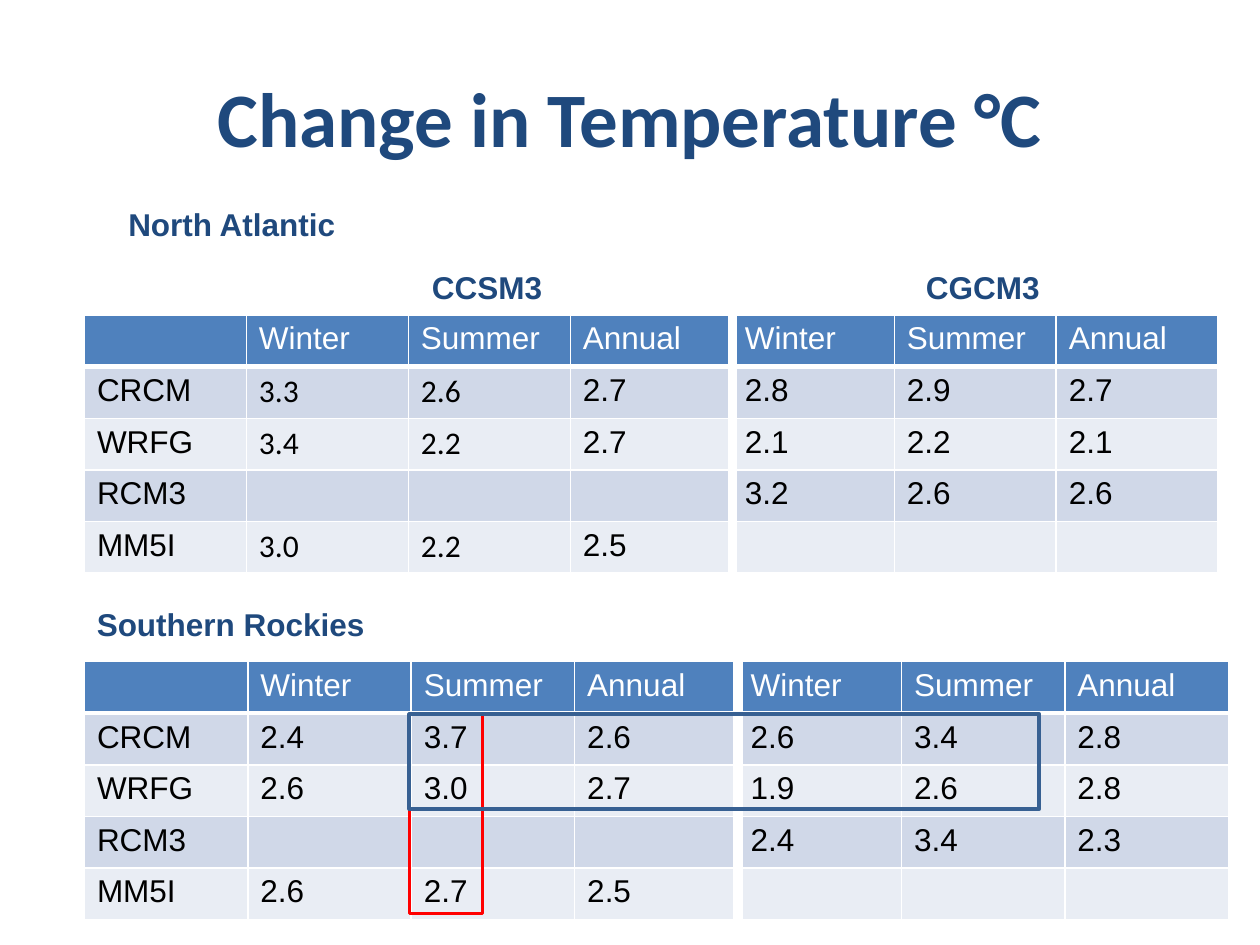
from lxml.etree import SubElement
from pptx import Presentation
from pptx.dml.color import RGBColor
from pptx.enum.shapes import MSO_SHAPE
from pptx.enum.text import MSO_ANCHOR, PP_ALIGN
from pptx.oxml import parse_xml
from pptx.oxml.ns import nsdecls
from pptx.util import Inches, Pt

NAVY, WHITE, BLACK = "1F497D", "FFFFFF", "000000"
HEADER_FILL, BAND_FILLS = "4F81BD", ("D0D8E8", "E9EDF4")
ROW_HEIGHT = 0.41
SPLIT = 4  # first column of the second driving model

SEASONS = ["Winter", "Summer", "Annual"]
HEADER = [""] + SEASONS * 2
ATLANTIC = [
    HEADER,
    ["CRCM", "3.3", "2.6", "2.7", "2.8", "2.9", "2.7"],
    ["WRFG", "3.4", "2.2", "2.7", "2.1", "2.2", "2.1"],
    ["RCM3", "", "", "", "3.2", "2.6", "2.6"],
    ["MM5I", "3.0", "2.2", "2.5", "", "", ""],
]
ROCKIES = [
    HEADER,
    ["CRCM", "2.4", "3.7", "2.6", "2.6", "3.4", "2.8"],
    ["WRFG", "2.6", "3.0", "2.7", "1.9", "2.6", "2.8"],
    ["RCM3", "", "", "", "2.4", "3.4", "2.3"],
    ["MM5I", "2.6", "2.7", "2.5", "", "", ""],
]
# rows, top, width, columns whose values are in Calibri
TABLES = [(ATLANTIC, 2.5, 9, (1, 2)), (ROCKIES, 5.25, 9.08, ())]
# text, left, top, width, height
LABELS = [
    ("North Atlantic", 0.92, 1.58, 3.17, 0.42),
    ("CCSM3", 3.33, 2.08, 1.75, 0.42),
    ("CGCM3", 7.25, 2.08, 1.67, 0.42),
    ("Southern Rockies", 0.67, 4.75, 2.5, 0.4),
]
# width, height, colour, line width
HIGHLIGHTS = [(0.58, 1.58, "FF0000", 2), (5, 0.75, "376092", 2.25)]


def rgb(value):
    return RGBColor.from_string(value)


def style(paragraph, size, colour, name="Arial", bold=False):
    for span in paragraph.runs:
        span.font.size = Pt(size)
        span.font.name = name
        span.font.bold = bold
        span.font.color.rgb = rgb(colour)


def add_text(page, text, left, top, width, height, size=18, name="Arial"):
    box = page.shapes.add_textbox(Inches(left), Inches(top), Inches(width), Inches(height))
    box.text_frame.word_wrap = True
    box.text_frame.text = text
    style(box.text_frame.paragraphs[0], size, NAVY, name, bold=True)
    return box


def set_borders(cell, **widths):
    """Draw white cell borders; widths in points, keyed L, R, T, B."""
    properties = cell._tc.get_or_add_tcPr()
    for index, side in enumerate("LRTB"):
        line = parse_xml(f'<a:ln{side} {nsdecls("a")} w="{Pt(widths.get(side, 1))}">'
                         f'<a:solidFill><a:srgbClr val="{WHITE}"/></a:solidFill></a:ln{side}>')
        properties.insert(index, line)


def add_values(page, rows, top, width, calibri_columns):
    columns = len(rows[0])
    frame = page.shapes.add_table(len(rows), columns, Inches(0.67), Inches(top),
                                  Inches(width), Inches(ROW_HEIGHT * len(rows)))
    table = frame.table
    for column in table.columns:
        column.width = Inches(width / columns)
    for r, values in enumerate(rows):
        table.rows[r].height = Inches(ROW_HEIGHT)
        for c, value in enumerate(values):
            cell = table.cell(r, c)
            cell.text = value
            name = "Calibri" if r and c in calibri_columns else "Arial"
            style(cell.text_frame.paragraphs[0], 18, BLACK if r else WHITE, name)
            cell.fill.solid()
            cell.fill.fore_color.rgb = rgb(BAND_FILLS[(r - 1) % 2] if r else HEADER_FILL)
            set_borders(cell, L=6 if c == SPLIT else 1, R=6 if c == SPLIT - 1 else 1,
                        T=3 if r == 1 else 1, B=1 if r else 3)


def add_highlight(page, width, height, colour, weight):
    box = page.shapes.add_shape(MSO_SHAPE.RECTANGLE, Inches(3.25), Inches(5.67),
                                Inches(width), Inches(height))
    box.shadow.inherit = False
    box.fill.background()
    box.line.color.rgb = rgb(colour)
    box.line.width = Pt(weight)


deck = Presentation()
deck.slide_width, deck.slide_height = Inches(10), Inches(7.5)
page = deck.slides.add_slide(deck.slide_layouts[6])

title = add_text(page, "Change in Temperature °C", 0.5, 0.3, 9, 1.25, 44, "Calibri")
title.text_frame.vertical_anchor = MSO_ANCHOR.MIDDLE
title.text_frame.paragraphs[0].alignment = PP_ALIGN.CENTER
for table_values in TABLES:
    add_values(page, *table_values)
for label in LABELS:
    add_text(page, *label)
for highlight in HIGHLIGHTS:
    add_highlight(page, *highlight)

deck.save("out.pptx")
